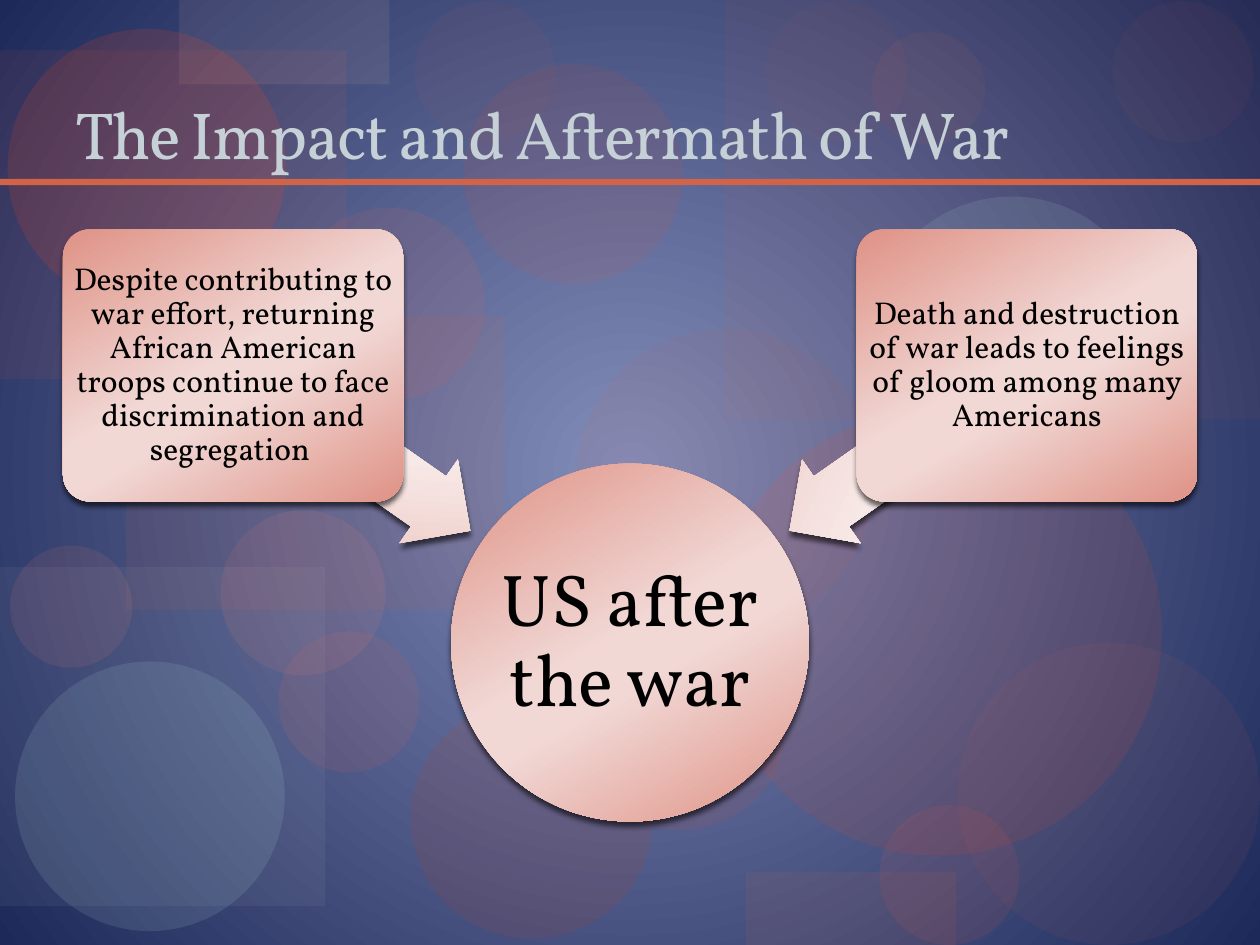
from lxml.etree import SubElement
from pptx import Presentation
from pptx.dml.color import RGBColor
from pptx.enum.shapes import MSO_SHAPE
from pptx.enum.text import MSO_ANCHOR, MSO_AUTO_SIZE, PP_ALIGN
from pptx.oxml.ns import qn
from pptx.util import Inches, Pt

WIDTH, HEIGHT = 10, 7.5
MARGIN = 0.5
FONT = "Vollkorn"

BLACK = RGBColor(0x00, 0x00, 0x00)
TITLE_GRAY = RGBColor(0xC5, 0xD1, 0xD7)
GLOW, NAVY = RGBColor(0x83, 0x8D, 0xBA), RGBColor(0x1D, 0x29, 0x58)
ORANGE = RGBColor(0xD1, 0x63, 0x49)
BRICK = RGBColor(0xBB, 0x41, 0x2B)
SILVER = RGBColor(0xB8, 0xBA, 0xC3)
ROSE = RGBColor(0xBF, 0x61, 0x54)
TOMATO = RGBColor(0xFF, 0x63, 0x47)
MINT = RGBColor(0xC1, 0xE8, 0xE4)
SCARLET = RGBColor(0xFF, 0x47, 0x1B)
BLUSH = RGBColor(0xE5, 0xB7, 0xB1)
CORAL = RGBColor(0xFF, 0x86, 0x74)
CARD_DARK, CARD_LIGHT = RGBColor(0xDF, 0x92, 0x86), RGBColor(0xF1, 0xD8, 0xD5)
ARROW_DARK, ARROW_LIGHT = RGBColor(0xEC, 0xC7, 0xC2), RGBColor(0xF7, 0xE9, 0xE7)

TITLE = "The Impact and Aftermath of War"
RESULT = "US after the war"
CAUSES = [
    "Despite contributing to war effort, returning African American troops "
    "continue to face discrimination and segregation ",
    "Death and destruction of war leads to feelings of gloom among many Americans",
]

RECT, OVAL = MSO_SHAPE.RECTANGLE, MSO_SHAPE.OVAL
# preset, left, top, width, height, colour, opacity in percent
BACKDROP = [
    (RECT, 1, 2.51, 3, 2.33, ORANGE, 9),
    (OVAL, 3.26, 5.55, 1.92, 1.9, BRICK, 13),
    (RECT, 5.75, 0, 4.25, 3.33, ORANGE, 6),
    (RECT, 0, 4.5, 2.58, 2.69, SILVER, 8),
    (OVAL, 4.57, 2.61, 2.38, 2.38, ROSE, 8),
    (OVAL, 6.98, 6.39, 1.11, 1.11, TOMATO, 9),
    (OVAL, 6.91, 1.56, 2.24, 2.24, MINT, 11),
    (OVAL, 0.12, 5.25, 2.14, 2.14, MINT, 12),
    (OVAL, 2.21, 5.01, 1.12, 1.12, TOMATO, 9),
    (OVAL, 4.56, 5.06, 1.66, 1.53, SCARLET, 8),
    (RECT, 0, 0.4, 2.75, 2.61, TOMATO, 7),
    (RECT, 1.42, 0, 1.67, 0.67, BLUSH, 10),
    (OVAL, 0.06, 0.23, 2.21, 2.21, SCARLET, 15),
    (OVAL, 0.08, 4.33, 0.97, 0.97, CORAL, 10),
    (OVAL, 2.32, 1.65, 1.53, 1.53, TOMATO, 9),
    (OVAL, 3.68, 0.51, 1.74, 1.74, SCARLET, 8),
    (OVAL, 5.68, 3.25, 3.54, 3.54, SCARLET, 10),
    (OVAL, 6.08, 0.01, 1.12, 1.12, TOMATO, 4),
    (OVAL, 7.6, 5.1, 2.4, 2.4, ROSE, 8),
    (OVAL, 1.75, 4.05, 1.31, 1.31, CORAL, 10),
    (OVAL, 6.92, 0.25, 0.9, 0.9, TOMATO, 6),
    (OVAL, 8.83, 0.01, 1.12, 1.12, TOMATO, 4),
    (RECT, 5.92, 6.92, 1.67, 0.58, ORANGE, 10),
    (OVAL, 3.29, 0.01, 1.12, 1.12, TOMATO, 4),
    (RECT, 0, 1.42, WIDTH, 0.05, ORANGE, 100),
]


def add_plain_shape(slide, preset, left, top, width, height):
    shape = slide.shapes.add_shape(
        preset, Inches(left), Inches(top), Inches(width), Inches(height))
    shape.shadow.inherit = False
    shape.line.fill.background()
    return shape


def add_backdrop_shape(slide, preset, left, top, width, height, color, opacity):
    shape = add_plain_shape(slide, preset, left, top, width, height)
    shape.fill.solid()
    shape.fill.fore_color.rgb = color
    color_element = shape._element.spPr.find(".//" + qn("a:srgbClr"))
    SubElement(color_element, qn("a:alpha"), val=str(opacity * 1000))


def set_gradient(owner, fill, stops, angle=None):
    """Fill with (percent, colour) stops: clockwise angle, or from the centre if None."""
    fill.gradient()
    gradient = owner._element.find(".//" + qn("a:gradFill"))
    for child in list(gradient):
        gradient.remove(child)
    stop_list = SubElement(gradient, qn("a:gsLst"))
    for percent, color in stops:
        stop = SubElement(stop_list, qn("a:gs"), pos=str(percent * 1000))
        SubElement(stop, qn("a:srgbClr"), val=str(color))
    if angle is None:
        path = SubElement(gradient, qn("a:path"), path="circle")
        SubElement(path, qn("a:fillToRect"), dict.fromkeys("ltrb", "50000"))
    else:
        SubElement(gradient, qn("a:lin"), ang=str(angle * 60000), scaled="0")


def add_glossy_shape(slide, preset, left, top, width, height, dark, light):
    shape = add_plain_shape(slide, preset, left, top, width, height)
    set_gradient(shape, shape.fill,
                 [(0, dark), (48, light), (58, light), (100, dark)], angle=60)
    effects = shape._element.spPr.find(qn("a:effectLst"))
    shadow = SubElement(effects, qn("a:outerShdw"), blurRad=str(Pt(3)),
                        dist=str(Pt(3)), dir="5400000", rotWithShape="0")
    color = SubElement(shadow, qn("a:srgbClr"), val=str(BLACK))
    SubElement(color, qn("a:alpha"), val="60000")
    return shape


def format_run(run, size, color):
    run.font.name = FONT
    run.font.size = Pt(size)
    run.font.color.rgb = color


def set_label(shape, text, size, inset=0):
    frame = shape.text_frame
    frame.text = text
    frame.word_wrap = True
    frame.vertical_anchor = MSO_ANCHOR.MIDDLE
    frame.margin_left = frame.margin_right = Inches(inset)
    frame.margin_top = frame.margin_bottom = 0
    paragraph = frame.paragraphs[0]
    paragraph.alignment = PP_ALIGN.CENTER
    paragraph.line_spacing = 0.9
    format_run(paragraph.runs[0], size, BLACK)


def place_title(slide):
    title = slide.shapes.title
    slide.shapes._spTree.append(title._element)  # bring above the backdrop
    title.left, title.top = Inches(MARGIN), Inches(0.17)
    title.width, title.height = Inches(WIDTH - 2 * MARGIN), Inches(1.25)
    frame = title.text_frame
    frame.text = TITLE
    frame.vertical_anchor = MSO_ANCHOR.BOTTOM
    frame.auto_size = MSO_AUTO_SIZE.NONE
    paragraph = frame.paragraphs[0]
    paragraph.alignment = PP_ALIGN.LEFT
    run = paragraph.runs[0]
    format_run(run, 38, TITLE_GRAY)
    run.font._element.set("spc", "-100")


def add_diagram(slide):
    diameter, card_width, arrow_width = 2.84, 2.7, 2.29
    circle = add_glossy_shape(slide, OVAL, (WIDTH - diameter) / 2, 3.68,
                              diameter, diameter, CARD_DARK, CARD_LIGHT)
    set_label(circle, RESULT, 42, inset=-0.2)  # widen past the oval's text area

    card_lefts = (MARGIN, WIDTH - MARGIN - card_width)
    arrow_lefts = (1.65, WIDTH - 1.65 - arrow_width)
    for text, card_left, arrow_left, rotation in zip(
            CAUSES, card_lefts, arrow_lefts, (215, 325)):
        arrow = add_glossy_shape(slide, MSO_SHAPE.LEFT_ARROW, arrow_left, 3.15,
                                 arrow_width, 0.81, ARROW_DARK, ARROW_LIGHT)
        arrow.adjustments[0] = 0.6
        arrow.rotation = rotation
        card = add_glossy_shape(slide, MSO_SHAPE.ROUNDED_RECTANGLE, card_left, 1.82,
                                card_width, 2.16, CARD_DARK, CARD_LIGHT)
        card.adjustments[0] = 0.1
        set_label(card, text, 18)


def main():
    presentation = Presentation()
    presentation.slide_width, presentation.slide_height = Inches(WIDTH), Inches(HEIGHT)
    slide = presentation.slides.add_slide(presentation.slide_layouts[5])
    set_gradient(slide, slide.background.fill, [(0, GLOW), (100, NAVY)])
    for backdrop_shape in BACKDROP:
        add_backdrop_shape(slide, *backdrop_shape)
    place_title(slide)
    add_diagram(slide)
    presentation.save("out.pptx")


if __name__ == "__main__":
    main()
